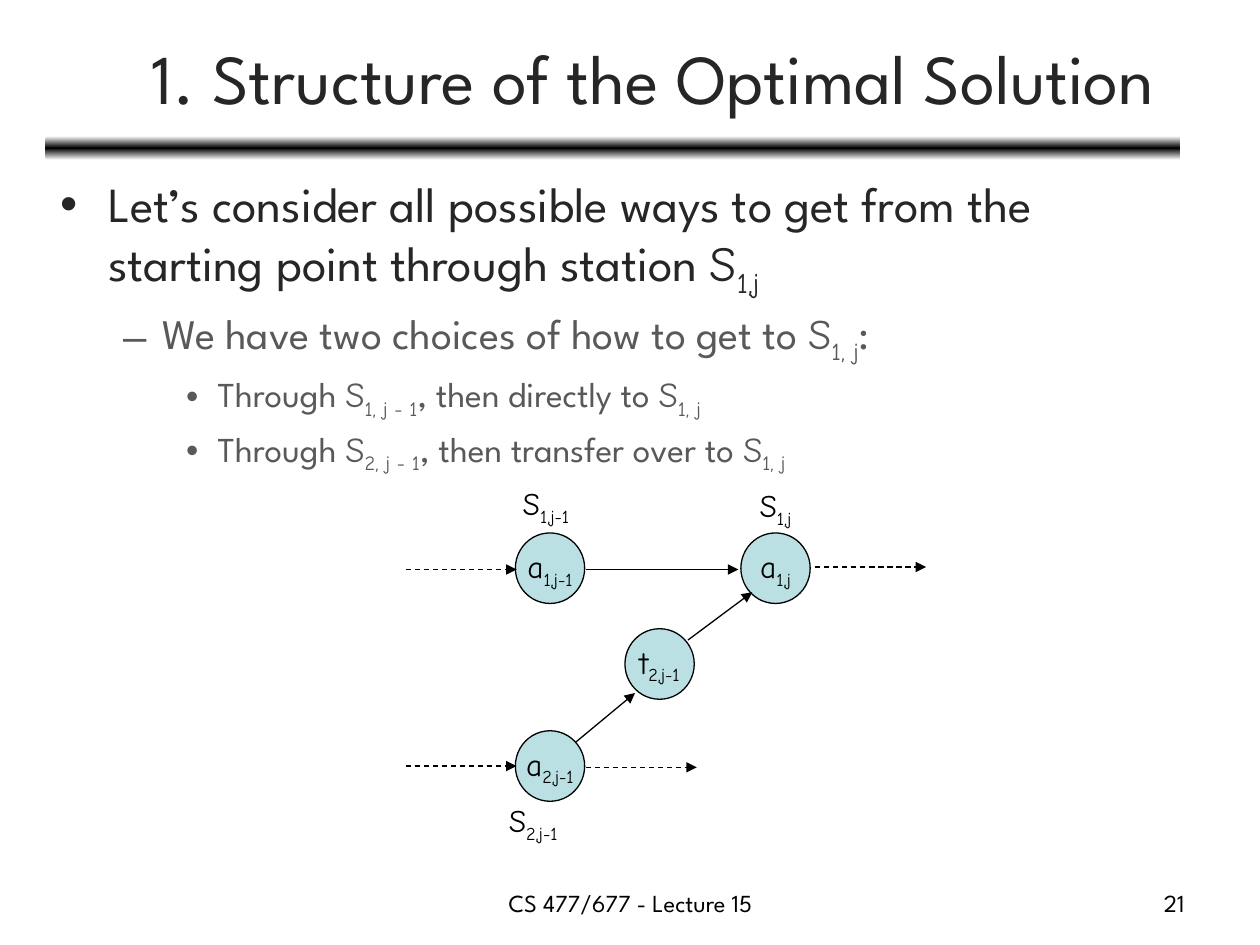
from copy import deepcopy
from dataclasses import dataclass

from lxml.etree import SubElement
from pptx import Presentation
from pptx.dml.color import RGBColor
from pptx.enum.dml import MSO_LINE
from pptx.enum.shapes import MSO_CONNECTOR, MSO_SHAPE
from pptx.enum.text import MSO_ANCHOR, MSO_AUTO_SIZE, PP_ALIGN
from pptx.oxml.ns import qn
from pptx.util import Emu, Pt

EMU_PER_PX = 9144  # 100 px to the inch


def px(length):
    return Emu(length * EMU_PER_PX)


@dataclass(frozen=True)
class Theme:
    text_font: str = "League Spartan"
    symbol_font: str = "Comic Neue"
    black: RGBColor = RGBColor(0x00, 0x00, 0x00)
    white: RGBColor = RGBColor(0xFF, 0xFF, 0xFF)
    heading: RGBColor = RGBColor(0x26, 0x26, 0x26)
    detail: RGBColor = RGBColor(0x59, 0x59, 0x59)
    station: RGBColor = RGBColor(0xBB, 0xE0, 0xE3)
    title_size: int = 40
    level_sizes: tuple = (28, 24, 20)
    diagram_size: int = 18
    footer_size: int = 14
    line_width: float = 0.75


class SlideBuilder:
    def __init__(self, slide, theme):
        self.slide = slide
        self.shapes = slide.shapes
        self.theme = theme

    def add_spans(self, para, pieces, size, color):
        """Fill a paragraph; a (name, index) pair becomes a symbol with a subscript."""
        for piece in pieces:
            is_symbol = isinstance(piece, tuple)
            for position, text in enumerate(piece if is_symbol else (piece,)):
                span = para.add_run()
                span.text = text
                font = span.font
                font.name = self.theme.symbol_font if is_symbol else self.theme.text_font
                font.size = Pt(size)
                font.color.rgb = color
                if position == 1:
                    font._element.set("baseline", "-25000")

    def title(self, text, left, top, width, height):
        box = self.shapes.title
        box.left, box.top, box.width, box.height = map(px, (left, top, width, height))
        frame = box.text_frame
        frame.auto_size = MSO_AUTO_SIZE.NONE
        frame.vertical_anchor = MSO_ANCHOR.MIDDLE
        para = frame.paragraphs[0]
        para.alignment = PP_ALIGN.CENTER
        self.add_spans(para, [text], self.theme.title_size, self.theme.heading)

    def gradient_bar(self, left, top, width, height):
        """Draw a bar that fades from black in the middle to white at both edges."""
        bar = self.shapes.add_shape(
            MSO_SHAPE.ROUNDED_RECTANGLE, *map(px, (left, top, width, height)))
        bar.shadow.inherit = False
        bar.line.fill.background()
        bar.fill.gradient()
        bar.fill.gradient_angle = 90
        stop_list = bar._element.spPr.find(qn("a:gradFill")).find(qn("a:gsLst"))
        stop_list.append(deepcopy(stop_list[0]))
        colors = (self.theme.white, self.theme.black, self.theme.white)
        for stop, position, color in zip(bar.fill.gradient_stops, (0, 0.5, 1), colors):
            stop.position = position
            stop.color.rgb = color

    def bullets(self, items, left, top, width, height):
        """Set (level, pieces) items as an indented list."""
        theme = self.theme
        styles = (("•", 38, 38, theme.heading),
                  ("–", 81, 31, theme.detail),
                  ("•", 125, 25, theme.detail))
        frame = self.shapes.add_textbox(*map(px, (left, top, width, height))).text_frame
        frame.word_wrap = True
        for number, (level, pieces) in enumerate(items):
            para = frame.add_paragraph() if number else frame.paragraphs[0]
            mark, margin, hanging, color = styles[level]
            size = theme.level_sizes[level]
            para.level = level
            para.space_before = Pt(size * 0.2)
            properties = para._p.get_or_add_pPr()
            properties.set("marL", str(px(margin)))
            properties.set("indent", str(-px(hanging)))
            SubElement(properties, qn("a:buFont")).set("typeface", "Arial")
            SubElement(properties, qn("a:buChar")).set("char", mark)
            self.add_spans(para, pieces, size, color)

    def station(self, symbol, left, top):
        circle = self.shapes.add_shape(MSO_SHAPE.OVAL, px(left), px(top), px(55), px(56))
        circle.shadow.inherit = False
        circle.fill.solid()
        circle.fill.fore_color.rgb = self.theme.station
        circle.line.color.rgb = self.theme.black
        circle.line.width = Pt(self.theme.line_width)
        frame = circle.text_frame
        frame.word_wrap = False
        frame.vertical_anchor = MSO_ANCHOR.MIDDLE
        para = frame.paragraphs[0]
        para.alignment = PP_ALIGN.CENTER
        self.add_spans(para, [symbol], self.theme.diagram_size, self.theme.black)

    def label(self, symbol, left, top, width):
        frame = self.shapes.add_textbox(px(left), px(top), px(width), px(40)).text_frame
        frame.word_wrap = False
        frame.auto_size = MSO_AUTO_SIZE.SHAPE_TO_FIT_TEXT
        self.add_spans(frame.paragraphs[0], [symbol], self.theme.diagram_size, self.theme.black)

    def arrow(self, start, end, dashed=False):
        arrow = self.shapes.add_connector(MSO_CONNECTOR.STRAIGHT, *map(px, start + end))
        arrow.line.color.rgb = self.theme.black
        arrow.line.width = Pt(self.theme.line_width)
        if dashed:
            arrow.line.dash_style = MSO_LINE.DASH
        properties = arrow._element.spPr
        SubElement(properties.find(qn("a:ln")), qn("a:tailEnd")).set("type", "triangle")
        SubElement(properties, qn("a:effectLst"))

    def footer(self, text, left, width, alignment):
        frame = self.shapes.add_textbox(px(left), px(700), px(width), px(35)).text_frame
        frame.word_wrap = True
        para = frame.paragraphs[0]
        para.alignment = alignment
        self.add_spans(para, [text], self.theme.footer_size, self.theme.black)


def main():
    deck = Presentation()
    deck.slide_width, deck.slide_height = px(1000), px(750)
    page = SlideBuilder(deck.slides.add_slide(deck.slide_layouts[5]), Theme())

    page.gradient_bar(36, 108, 901, 19)
    page.title("1. Structure of the Optimal Solution", 37, 11, 963, 99)
    target = ("S", "1, j")
    page.bullets([
        (0, ["Let’s consider all possible ways to get from the starting point "
             "through station ", ("S", "1,j")]),
        (1, ["We have two choices of how to get to ", target, ":"]),
        (2, ["Through ", ("S", "1, j - 1"), ", then directly to ", target]),
        (2, ["Through ", ("S", "2, j - 1"), ", then transfer over to ", target]),
    ], 38, 133, 906, 555)

    for symbol, left, top in ((("a", "1,j"), 588, 423),
                              (("a", "1,j-1"), 409, 423),
                              (("a", "2,j-1"), 409, 580),
                              (("t", "2,j-1"), 496, 499)):
        page.station(symbol, left, top)

    for index, left, top, width in (("1,j", 593, 381, 56),
                                    ("1,j-1", 405, 379, 71),
                                    ("2,j-1", 394, 631, 74)):
        page.label(("S", index), left, top, width)

    for start, end in (((465, 452), (586, 452)),
                       ((457, 589), (504, 550)),
                       ((546, 508), (597, 470))):
        page.arrow(start, end)
    for left, top in ((322, 452), (322, 608), (647, 450), (465, 609)):
        page.arrow((left, top), (left + 88, top), dashed=True)

    page.footer("CS 477/677 - Lecture 15", 342, 317, PP_ALIGN.CENTER)
    page.footer("21", 717, 233, PP_ALIGN.RIGHT)
    deck.save("out.pptx")


if __name__ == "__main__":
    main()
